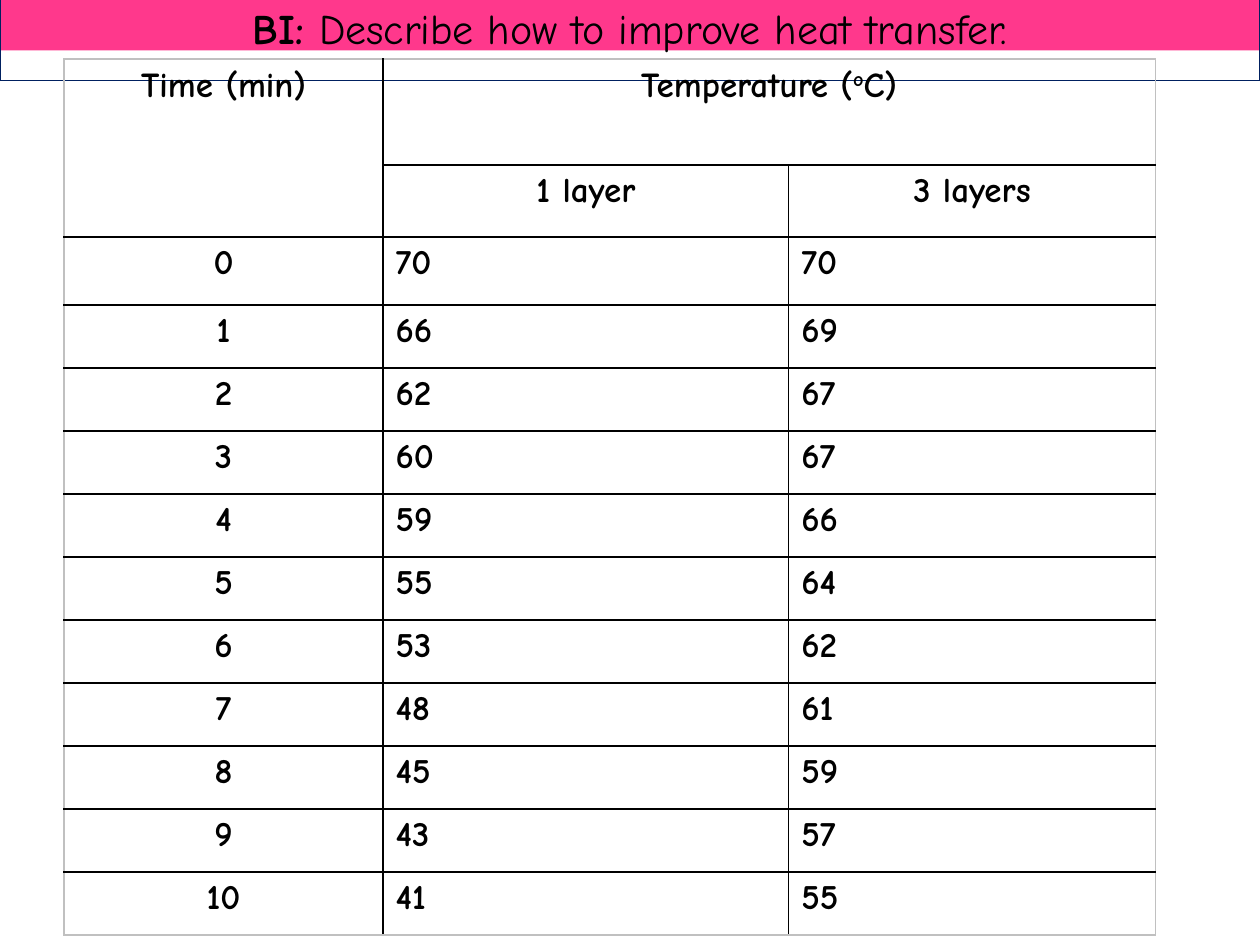
from lxml import etree
from pptx import Presentation
from pptx.dml.color import RGBColor
from pptx.enum.shapes import MSO_SHAPE
from pptx.enum.text import MSO_ANCHOR, MSO_AUTO_SIZE, PP_ALIGN
from pptx.oxml.ns import qn
from pptx.util import Inches, Pt

RECT = MSO_SHAPE.RECTANGLE
MIDDLE = MSO_ANCHOR.MIDDLE
GROW = MSO_AUTO_SIZE.SHAPE_TO_FIT_TEXT
LEFT, CENTER = PP_ALIGN.LEFT, PP_ALIGN.CENTER

PINK = RGBColor(0xFF, 0x38, 0x8C)
NAVY = RGBColor(0x00, 0x20, 0x60)
BLACK = RGBColor(0x00, 0x00, 0x00)
GREY = RGBColor(0xC0, 0xC0, 0xC0)

WIDTH, HEIGHT = 10, 7.5
COLS = [2.53, 3.22, 2.91]
ROWS = [0.84, 0.57, 0.54] + [0.5] * 10
ONE = [70, 66, 62, 60, 59, 55, 53, 48, 45, 43, 41]
THREE = [70, 69, 67, 67, 66, 64, 62, 61, 59, 57, 55]


class Deck:
    """Holds the style and the current slide; boxes are shares of its size."""
    font = "Comic Neue"

    def __init__(self):
        self.prs = Presentation()
        self.prs.slide_width = Inches(WIDTH)
        self.prs.slide_height = Inches(HEIGHT)
        self.slide = self.prs.slides.add_slide(self.prs.slide_layouts[5])

    def box(self, x, y, w, h):
        return (Inches(x * WIDTH), Inches(y * HEIGHT),
                Inches(w * WIDTH), Inches(h * HEIGHT))

    def text(self, frame, runs, size, align, bold=None):
        para = frame.paragraphs[0]
        para.alignment = align
        font = para.font
        font.name, font.size, font.bold = self.font, Pt(size), bold
        font.color.rgb = BLACK
        for words in runs:
            para.add_run().text = words
        return para.runs

    def band(self, *area):
        """Draw the filled strip behind the title."""
        shape = self.slide.shapes.add_shape(RECT, *self.box(*area))
        shape.shadow.inherit = False
        shape.fill.solid()
        shape.fill.fore_color.rgb = PINK
        shape.line.fill.background()
        self.slide.shapes.title._element.addprevious(shape._element)

    def title(self, label, words, *area):
        shape = self.slide.shapes.title
        shape.left, shape.top, shape.width, shape.height = self.box(*area)
        shape.line.color.rgb = NAVY
        shape.line.width = Pt(0.75)
        frame = shape.text_frame
        frame.word_wrap = True
        frame.auto_size = GROW
        frame.vertical_anchor = MIDDLE
        head, body = self.text(frame, [label, words], 24, CENTER)
        head.font.bold, body.font.bold = True, False

    def edge(self, cell, side, color):
        line = etree.SubElement(cell._tc.get_or_add_tcPr(), qn("a:ln" + side),
                                w=str(Pt(1)))
        fill = etree.SubElement(line, qn("a:solidFill"))
        etree.SubElement(fill, qn("a:srgbClr"), val=str(color))

    def frame(self, cell, row, col):
        """Rule a cell: grey on the rim of the table, black inside."""
        rim = {"L": col == 0, "R": col + cell.span_width == len(COLS),
               "T": row == 0, "B": row + cell.span_height == len(ROWS)}
        for side, outer in rim.items():
            self.edge(cell, side, GREY if outer else BLACK)
        cell.fill.background()

    def table(self, x, y):
        area = self.box(x, y, sum(COLS) / WIDTH, sum(ROWS) / HEIGHT)
        table = self.slide.shapes.add_table(len(ROWS), len(COLS), *area).table
        table.first_row = table.horz_banding = False
        for col, width in zip(table.columns, COLS):
            col.width = Inches(width)
        for row, height in zip(table.rows, ROWS):
            row.height = Inches(height)
        table.cell(0, 0).merge(table.cell(1, 0))
        table.cell(0, 1).merge(table.cell(0, 2))
        for row in range(len(ROWS)):
            for col in range(len(COLS)):
                self.frame(table.cell(row, col), row, col)
        return table

    def cell(self, table, row, col, *runs, align=CENTER):
        frame = table.cell(row, col).text_frame
        return self.text(frame, runs, 20, align, True)


def main():
    deck = Deck()
    deck.band(0, 0, 1, 0.4 / HEIGHT)
    deck.title("BI: ", "Describe how to improve heat transfer.",
               0, -0.03 / HEIGHT, 1, 0.5 / HEIGHT)
    table = deck.table(0.51 / WIDTH, 0.47 / HEIGHT)
    deck.cell(table, 0, 0, "Time (min)")
    runs = deck.cell(table, 0, 1, "Temperature (", "o", "C)")
    runs[1].font._element.set("baseline", "30000")
    deck.cell(table, 1, 1, "1 layer")
    deck.cell(table, 1, 2, "3 layers")
    for time, temps in enumerate(zip(ONE, THREE)):
        deck.cell(table, time + 2, 0, str(time))
        for col, temp in enumerate(temps, 1):
            deck.cell(table, time + 2, col, str(temp), align=LEFT)
    deck.prs.save("out.pptx")


if __name__ == "__main__":
    main()
